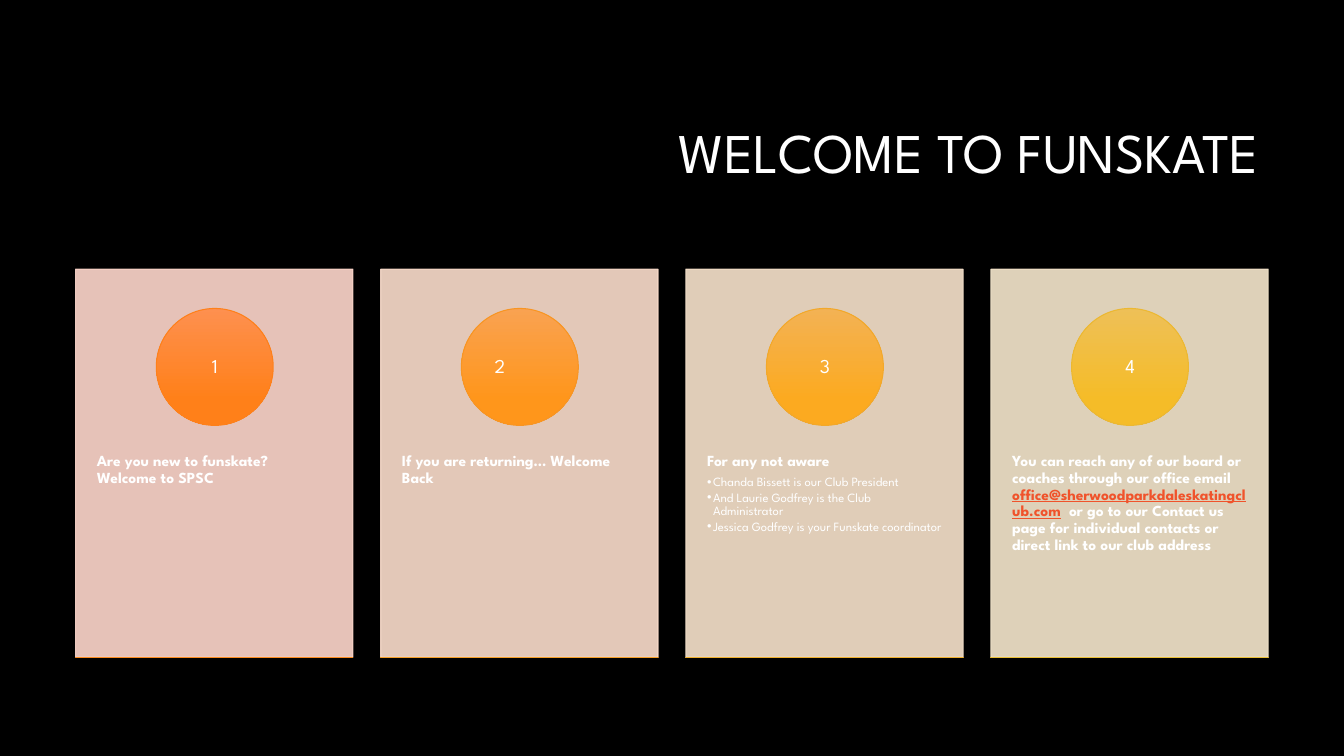
"""Build the welcome slide with four numbered cards."""
from dataclasses import dataclass

from lxml import etree
from pptx import Presentation
from pptx.dml.color import RGBColor
from pptx.enum.shapes import MSO_SHAPE
from pptx.enum.text import MSO_ANCHOR, MSO_AUTO_SIZE, PP_ALIGN
from pptx.oxml.ns import qn
from pptx.util import Inches, Pt

RECTANGLE, OVAL = MSO_SHAPE.RECTANGLE, MSO_SHAPE.OVAL
TOP, MIDDLE = MSO_ANCHOR.TOP, MSO_ANCHOR.MIDDLE
LEFT, CENTER, RIGHT = PP_ALIGN.LEFT, PP_ALIGN.CENTER, PP_ALIGN.RIGHT
FIXED = MSO_AUTO_SIZE.NONE

WIDTH, HEIGHT = Inches(13.33), Inches(7.5)
FONT = "League Spartan"
COLOURS = {"page": "000000", "text": "FFFFFF", "link": "F0532B"}
FIRST_COLUMN, COLUMN_STEP, CARD_WIDTH = 5.63, 22.7, 20.63


@dataclass
class Span:
    text: str
    size: float = 11
    bold: bool = False
    underline: bool = False
    colour: str = "text"


@dataclass
class Para:
    spans: list[Span]
    align: int = LEFT
    after: float = 3.85
    bullet: bool = False


@dataclass
class Gradient:
    start: str
    end: str
    line: str


@dataclass
class Card:
    number: str
    tint: str
    circle: Gradient
    edge: Gradient
    paras: list[Para]


def heading(text: str) -> Para:
    return Para([Span(text, bold=True)])


def bullet(text: str) -> Para:
    return Para([Span(text, size=9)], after=1.35, bullet=True)


CARDS = [
    Card("1", "FFD8CD", Gradient("FE904F", "FF8019", "FE801A"),
         Gradient("FB9950", "FF8B1A", "FB8B1E"),
         [heading("Are you new to funskate? Welcome to SPSC")]),
    Card("2\t", "FCDECD", Gradient("F9A251", "FF961B", "F89522"),
         Gradient("F6AA52", "FFA01C", "F59F26"),
         [heading("If you are returning… Welcome Back")]),
    Card("3", "F9E4CD", Gradient("F3B254", "FCAA20", "F2A82A"),
         Gradient("F1B956", "F9B324", "EFB02D"),
         [heading("For any not aware"),
          bullet("Chanda Bissett is our Club President"),
          bullet("And Laurie Godfrey is the Club Administrator"),
          bullet("Jessica Godfrey is your Funskate coordinator")]),
    Card("4", "F7E8CE", Gradient("EEC057", "F5BC28", "ECB831"),
         Gradient("EBC659", "F2C42C", "E9BF35"),
         [Para([
             Span("You can reach any of our board or coaches through our office email ",
                  bold=True),
             Span("office@sherwoodparkdaleskatingclub.com", bold=True,
                  underline=True, colour="link"),
             Span("  or go to our Contact us page for individual contacts "
                  "or direct link to our club address", bold=True)])]),
]


def apply(target, values: dict) -> None:
    for name, value in values.items():
        setattr(target, name, value)


def area(left: float, top: float, width: float, height: float) -> dict:
    """Turn percentages of the slide into lengths."""
    return {"left": int(WIDTH * left / 100), "top": int(HEIGHT * top / 100),
            "width": int(WIDTH * width / 100), "height": int(HEIGHT * height / 100)}


def write(box, paras: list[Para], anchor: int, side: float, end: float) -> None:
    frame = box.text_frame
    apply(frame, {"word_wrap": True, "auto_size": FIXED, "vertical_anchor": anchor,
                  "margin_left": Inches(side), "margin_right": Inches(side),
                  "margin_top": Inches(end), "margin_bottom": Inches(end)})
    for index, para in enumerate(paras):
        line = frame.paragraphs[0] if index == 0 else frame.add_paragraph()
        indent = Inches(0.06) if para.bullet else 0
        properties = line._p.get_or_add_pPr()
        properties.set("marL", str(indent))
        properties.set("indent", str(-indent))
        if para.bullet:
            etree.SubElement(properties, qn("a:buChar")).set("char", "•")
        else:
            etree.SubElement(properties, qn("a:buNone"))
        apply(line, {"alignment": para.align, "level": int(para.bullet),
                     "line_spacing": 0.9, "space_before": Pt(0),
                     "space_after": Pt(para.after)})
        for span in para.spans:
            run = line.add_run()
            run.text = span.text
            apply(run.font, {"name": FONT, "size": Pt(span.size), "bold": span.bold,
                             "underline": span.underline})
            run.font.color.rgb = RGBColor.from_string(COLOURS[span.colour])


def add_block(page, kind: int, place: dict, line: str):
    block = page.shapes.add_shape(kind, *place.values())
    block.shadow.inherit = False
    block.line.color.rgb = RGBColor.from_string(line)
    block.line.width = Pt(0.75)
    return block


def add_tinted(page, place: dict, tint: str) -> None:
    block = add_block(page, RECTANGLE, place, tint)
    block.fill.solid()
    block.fill.fore_color.rgb = RGBColor.from_string(tint)
    for colour in block._element.spPr.iter(qn("a:srgbClr")):
        etree.SubElement(colour, qn("a:alpha")).set("val", "90000")


def add_gradient(page, kind: int, place: dict, gradient: Gradient) -> None:
    block = add_block(page, kind, place, gradient.line)
    block.fill.gradient()
    block.fill.gradient_angle = 270
    stops = zip(block.fill.gradient_stops, (gradient.start, gradient.end), (0, 0.78))
    for stop, colour, position in stops:
        stop.color.rgb = RGBColor.from_string(colour)
        stop.position = position


def add_card(page, card: Card, left: float, body) -> None:
    add_tinted(page, area(left, 35.6, CARD_WIDTH, 51.33), card.tint)
    apply(body, area(left, 55.2, CARD_WIDTH, 30.8))
    page.shapes._spTree.append(body._element)
    write(body, card.paras, TOP, 0.21, 0.36)
    add_gradient(page, OVAL, area(left + 6, 40.8, 8.7, 15.47), card.circle)
    number = page.shapes.add_textbox(*area(left + 7.28, 43.07, 6.15, 10.93).values())
    write(number, [Para([Span(card.number, size=14)], CENTER)], MIDDLE, 0.09, 0.01)
    add_gradient(page, RECTANGLE, area(left, 86.93, CARD_WIDTH, 0), card.edge)


def main() -> None:
    deck = Presentation()
    apply(deck, {"slide_width": WIDTH, "slide_height": HEIGHT})
    page = deck.slides.add_slide(deck.slide_layouts.get_by_name("Comparison"))
    page.background.fill.solid()
    page.background.fill.fore_color.rgb = RGBColor.from_string(COLOURS["page"])
    title = page.shapes.title
    apply(title, area(23.78, 11.2, 70.67, 18.8))
    write(title, [Para([Span("WELCOME TO FUNSKATE", size=40)], RIGHT, after=0)],
          MIDDLE, 0.1, 0.05)
    bodies = [box for box in page.placeholders if 1 <= box.placeholder_format.idx <= 4]
    for index, (card, body) in enumerate(zip(CARDS, bodies)):
        add_card(page, card, FIRST_COLUMN + index * COLUMN_STEP, body)
    deck.save("out.pptx")


if __name__ == "__main__":
    main()
